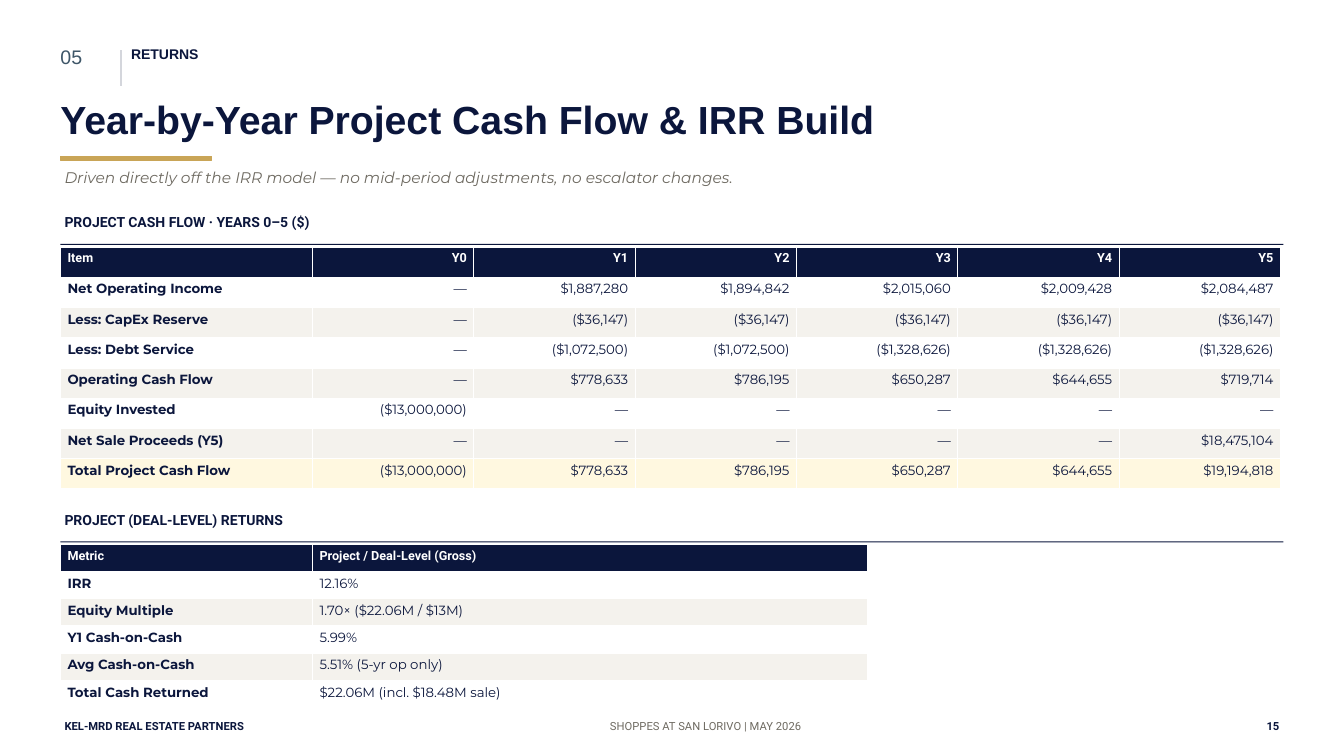
import pptx
import pptx.dml.color
import pptx.enum.shapes
import pptx.enum.text
import pptx.oxml
import pptx.util

PX = 9144
NAVY, GOLD, GREY, WHITE = "0B163C", "C9A557", "6E6A61", "FFFFFF"
BAND, TOTAL = "F4F2ED", "FFF8E0"
LEFT, WIDTH = 60, 1213
ALIGN = pptx.enum.text.PP_ALIGN

CASH_FLOW = [
    ["Item", "Y0", "Y1", "Y2", "Y3", "Y4", "Y5"],
    ["Net Operating Income", "—", "$1,887,280", "$1,894,842", "$2,015,060", "$2,009,428", "$2,084,487"],
    ["Less: CapEx Reserve", "—"] + ["($36,147)"] * 5,
    ["Less: Debt Service", "—"] + ["($1,072,500)"] * 2 + ["($1,328,626)"] * 3,
    ["Operating Cash Flow", "—", "$778,633", "$786,195", "$650,287", "$644,655", "$719,714"],
    ["Equity Invested", "($13,000,000)"] + ["—"] * 5,
    ["Net Sale Proceeds (Y5)"] + ["—"] * 5 + ["$18,475,104"],
    ["Total Project Cash Flow", "($13,000,000)", "$778,633", "$786,195", "$650,287", "$644,655", "$19,194,818"],
]
RETURNS = [
    ["Metric", "Project / Deal-Level (Gross)"],
    ["IRR", "12.16%"],
    ["Equity Multiple", "1.70× ($22.06M / $13M)"],
    ["Y1 Cash-on-Cash", "5.99%"],
    ["Avg Cash-on-Cash", "5.51% (5-yr op only)"],
    ["Total Cash Returned", "$22.06M (incl. $18.48M sale)"],
]


def px(*values):
    return [pptx.util.Emu(v * PX) for v in values]


def rgb(color):
    return pptx.dml.color.RGBColor.from_string(color)


def set_font(p, font, size, color, bold=False, italic=False):
    p.font.name = font
    p.font.size = pptx.util.Pt(size)
    p.font.color.rgb = rgb(color)
    p.font.bold = bold
    p.font.italic = italic


def add_text(s, box, text, font, size, color, bold=False, italic=False,
             align=ALIGN.LEFT, inset=(4, 2)):
    tf = s.shapes.add_textbox(*px(*box)).text_frame
    tf.word_wrap = True
    tf.auto_size = pptx.enum.text.MSO_AUTO_SIZE.SHAPE_TO_FIT_TEXT
    tf.margin_left, tf.margin_top = px(*inset)
    tf.margin_right, tf.margin_bottom = px(*inset)
    p = tf.paragraphs[0]
    p.text = text
    p.alignment = align
    set_font(p, font, size, color, bold, italic)


def add_bar(s, box, color, outline=None):
    sp = s.shapes.add_shape(pptx.enum.shapes.MSO_SHAPE.RECTANGLE, *px(*box))
    sp.shadow.inherit = False
    sp.fill.solid()
    sp.fill.fore_color.rgb = rgb(color)
    if outline:
        sp.line.color.rgb = rgb(color)
        sp.line.width = pptx.util.Pt(outline)
    else:
        sp.line.fill.background()


def add_divider(s, x, top, bottom, color, width):
    line = s.shapes.add_connector(
        pptx.enum.shapes.MSO_CONNECTOR.STRAIGHT, *px(x, top, x, bottom))
    line.line.color.rgb = rgb(color)
    line.line.width = pptx.util.Pt(width)
    pptx.oxml.ns.qn("a:effectLst")
    line._element.spPr.append(pptx.oxml.xmlchemy.OxmlElement("a:effectLst"))


def fill_cell(cell, text, fill, align):
    cell.margin_left, cell.margin_top = px(7, 4)
    cell.margin_right, cell.margin_bottom = px(7, 4)
    cell.fill.solid()
    cell.fill.fore_color.rgb = rgb(fill)
    p = cell.text_frame.paragraphs[0]
    p.text = text
    p.alignment = align
    return p


def add_table(s, top, rows, widths, row_height, value_align, has_total=False):
    box = px(LEFT, top, sum(widths), row_height * len(rows))
    table = s.shapes.add_table(len(rows), len(widths), *box).table
    for column, width in zip(table.columns, px(*widths)):
        column.width = width
    for i, row in enumerate(rows):
        fill = NAVY if i == 0 else WHITE if i % 2 else BAND
        if has_total and i == len(rows) - 1:
            fill = TOTAL
        for j, text in enumerate(row):
            p = fill_cell(table.cell(i, j), text, fill, value_align if j else ALIGN.LEFT)
            if i == 0:
                set_font(p, "Roboto", 9, WHITE, bold=True)
            else:
                set_font(p, "Montserrat", 9.5, NAVY, bold=j == 0)


def add_section(s, top, heading):
    add_text(s, (LEFT, top, 1000, 30), heading, "Roboto", 10, NAVY, bold=True)
    add_bar(s, (LEFT, top + 32, WIDTH, 1), NAVY)


def add_header(s):
    add_text(s, (LEFT, 45, 70, 45), "05", "Arial", 14, "3E5668", inset=(0, 0))
    add_divider(s, 120, 50, 85, "D4D6DC", 1.5)
    add_text(s, (130, 45, 800, 40), "RETURNS", "Arial", 10, NAVY, bold=True, inset=(0, 0))
    add_text(s, (LEFT, 95, WIDTH, 55), "Year-by-Year Project Cash Flow & IRR Build",
             "Arial", 28, NAVY, bold=True, inset=(0, 0))
    add_bar(s, (LEFT, 155, 150, 4), GOLD, outline=0.5)
    add_text(s, (LEFT, 165, WIDTH, 40),
             "Driven directly off the IRR model — no mid-period adjustments, no escalator changes.",
             "Montserrat", 11, GREY, italic=True)


def add_footer(s):
    add_text(s, (LEFT, 712, 500, 30), "KEL-MRD REAL ESTATE PARTNERS", "Roboto", 8, NAVY, bold=True)
    add_text(s, (500, 712, 400, 30), "SHOPPES AT SAN LORIVO | MAY 2026", "Roboto", 8, GREY,
             align=ALIGN.CENTER)
    add_text(s, (1173, 712, 100, 30), "15", "Roboto", 8, NAVY, bold=True, align=ALIGN.RIGHT)


def main():
    prs = pptx.Presentation()
    prs.slide_width, prs.slide_height = px(1333, 750)
    s = prs.slides.add_slide(prs.slide_layouts[6])
    add_header(s)
    add_section(s, 210, "PROJECT CASH FLOW · YEARS 0–5 ($)")
    add_table(s, 245, CASH_FLOW, [250] + [160] * 6, 30, ALIGN.RIGHT, has_total=True)
    add_section(s, 505, "PROJECT (DEAL-LEVEL) RETURNS")
    add_table(s, 540, RETURNS, [250, 550], 27, ALIGN.LEFT)
    add_footer(s)
    prs.save("out.pptx")


if __name__ == "__main__":
    main()
